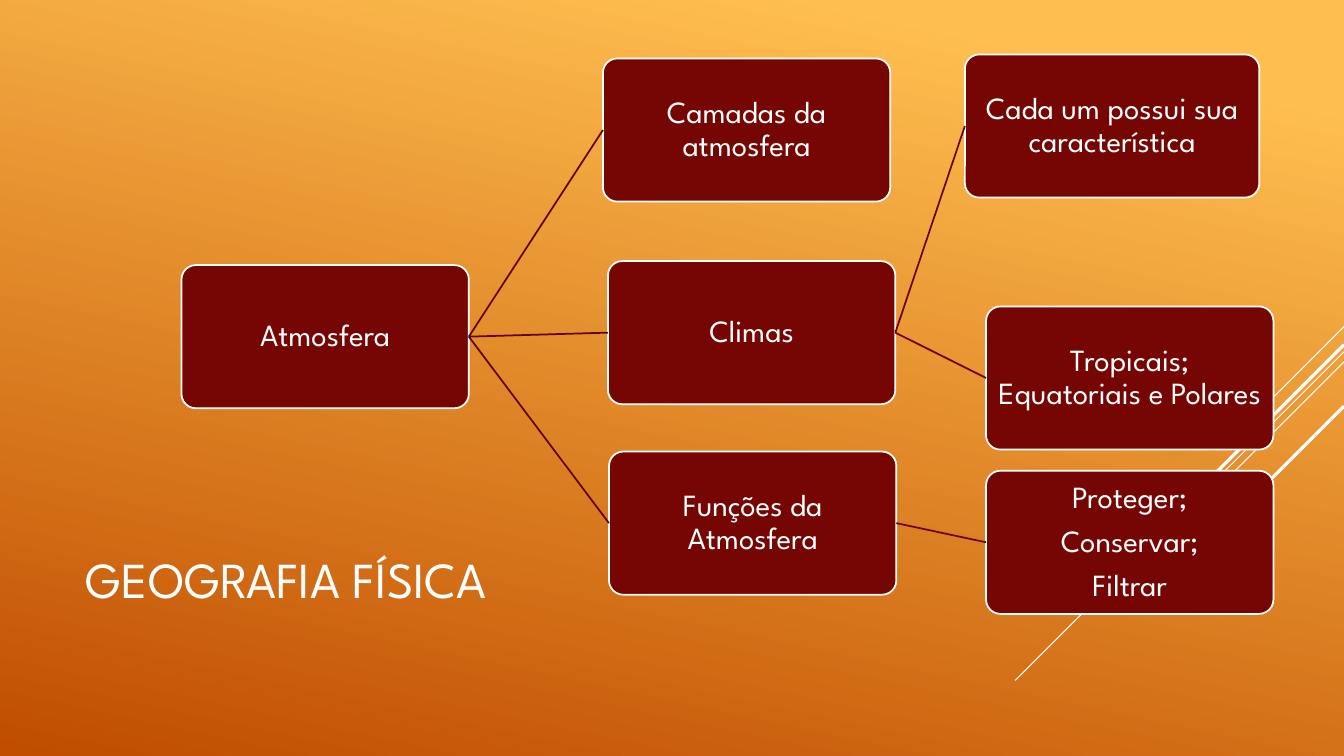
from dataclasses import dataclass

from pptx import Presentation
from pptx.dml.color import RGBColor
from pptx.enum.shapes import MSO_CONNECTOR as Connector, MSO_SHAPE as Shape
from pptx.enum.text import MSO_ANCHOR as Anchor, PP_ALIGN as Align
from pptx.oxml.ns import qn
from pptx.util import Inches, Pt
from lxml.etree import SubElement


@dataclass(frozen=True)
class Theme:
    font: str = "League Spartan"
    title_size: float = 36
    box_size: float = 22
    outline: float = 1.25
    white: RGBColor = RGBColor(0xFF, 0xFF, 0xFF)
    box: RGBColor = RGBColor(0x76, 0x06, 0x03)
    first_link: RGBColor = RGBColor(0x5E, 0x05, 0x02)
    second_link: RGBColor = RGBColor(0x6B, 0x05, 0x03)
    background_light: RGBColor = RGBColor(0xFF, 0xBF, 0x50)
    background_dark: RGBColor = RGBColor(0xC0, 0x4D, 0x00)


THEME = Theme()
BOX_WIDTH, BOX_HEIGHT = 2.85, 1.42
LEFT_SITE, RIGHT_SITE = 1, 3

# Decorative diagonals at 45°: start height on the right edge, run, weight
DIAGONALS = [
    (3.24, 1.0, 0.75),
    (3.49, 3.26, 0.75),
    (3.59, 2.07, 0.75),
    (3.42, 1.91, 2.25),
    (4.03, 1.39, 2.25),
]

# Topic: left, top, width, lines of text
TOPICS = {
    "atmosphere": (1.8, 2.63, BOX_WIDTH, ["Atmosfera"]),
    "layers": (5.98, 0.58, BOX_WIDTH, ["Camadas da atmosfera"]),
    "climates": (6.03, 2.59, BOX_WIDTH, ["Climas"]),
    "features": (9.57, 0.54, 2.92, ["Cada um possui sua característica"]),
    "zones": (9.78, 3.04, BOX_WIDTH, ["Tropicais; Equatoriais e Polares"]),
    "functions": (6.04, 4.48, BOX_WIDTH, ["Funções da Atmosfera"]),
    "purposes": (9.78, 4.67, BOX_WIDTH, ["Proteger;", "Conservar;", "Filtrar"]),
}

BRANCHES = [
    ("atmosphere", ["layers", "climates", "functions"], THEME.first_link),
    ("climates", ["features", "zones"], THEME.second_link),
    ("functions", ["purposes"], THEME.second_link),
]


def set_background(slide):
    fill = slide.background.fill
    fill.gradient()
    fill.gradient_angle = 360 - 102
    stops = zip(fill.gradient_stops, (0.1, 1.0),
                (THEME.background_light, THEME.background_dark))
    for stop, position, color in stops:
        stop.position = position
        stop.color.rgb = color


def style_font(paragraph, size):
    font = paragraph.font
    font.name = THEME.font
    font.size = Pt(size)
    font.color.rgb = THEME.white


def set_title(slide, text):
    title = slide.shapes.title
    title.left, title.top = Inches(0.75), Inches(4.91)
    title.width, title.height = Inches(9.33), Inches(1.65)
    frame = title.text_frame
    frame.text = text
    frame.vertical_anchor = Anchor.MIDDLE
    paragraph = frame.paragraphs[0]
    paragraph.alignment = Align.LEFT
    style_font(paragraph, THEME.title_size)


def add_line(slide, start, end, color, weight):
    line = slide.shapes.add_connector(
        Connector.STRAIGHT, *(Inches(value) for value in (*start, *end)))
    line.line.color.rgb = color
    line.line.width = Pt(weight)
    SubElement(line._element.spPr, qn("a:effectLst"))
    return line


def add_topic(slide, left, top, width, lines):
    shape = slide.shapes.add_shape(
        Shape.ROUNDED_RECTANGLE, Inches(left), Inches(top),
        Inches(width), Inches(BOX_HEIGHT))
    shape.adjustments[0] = 0.1
    shape.shadow.inherit = False
    shape.fill.solid()
    shape.fill.fore_color.rgb = THEME.box
    shape.line.color.rgb = THEME.white
    shape.line.width = Pt(THEME.outline)

    frame = shape.text_frame
    frame.word_wrap = True
    frame.vertical_anchor = Anchor.MIDDLE
    frame.margin_left = frame.margin_right = Inches(0.06)
    frame.margin_top = frame.margin_bottom = Inches(0.06)
    frame.text = "\n".join(lines)
    for paragraph in frame.paragraphs:
        paragraph.alignment = Align.CENTER
        paragraph.line_spacing = 0.9
        paragraph.space_after = Pt(0.35 * THEME.box_size)
        style_font(paragraph, THEME.box_size)
    return shape


def link_topics(slide, parent, child, color):
    line = add_line(slide, (0, 0), (0, 0), color, THEME.outline)
    line.begin_connect(parent, RIGHT_SITE)
    line.end_connect(child, LEFT_SITE)


def main():
    presentation = Presentation()
    presentation.slide_width = Inches(13.33)
    presentation.slide_height = Inches(7.5)
    slide = presentation.slides.add_slide(presentation.slide_layouts[5])

    # Backdrop
    set_background(slide)
    for top, run, weight in DIAGONALS:
        add_line(slide, (13.33, top), (13.33 - run, top + run), THEME.white, weight)

    # Title and topic tree
    set_title(slide, "GEOGRAFIA FÍSICA")
    boxes = {name: add_topic(slide, *topic) for name, topic in TOPICS.items()}
    for parent, children, color in BRANCHES:
        for child in children:
            link_topics(slide, boxes[parent], boxes[child], color)

    presentation.save("out.pptx")


if __name__ == "__main__":
    main()
